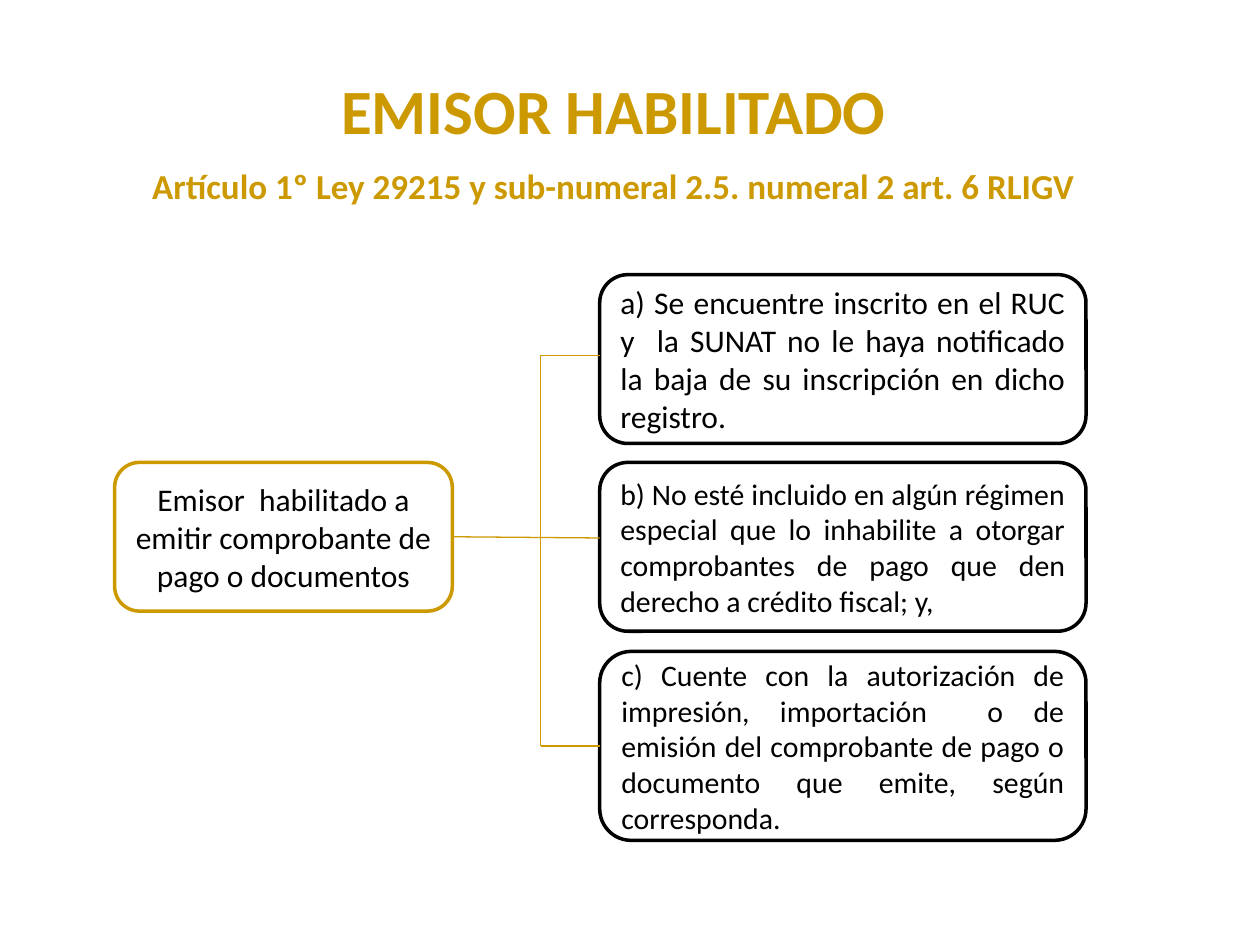
"""Build the slide on the conditions of an authorised issuer."""
from dataclasses import dataclass

from lxml import etree
from pptx import Presentation
from pptx.dml.color import RGBColor
from pptx.enum.shapes import MSO_CONNECTOR, MSO_SHAPE
from pptx.enum.text import MSO_ANCHOR, MSO_AUTO_SIZE, PP_ALIGN
from pptx.oxml.ns import qn
from pptx.slide import Slide
from pptx.util import Inches, Pt

STRAIGHT = MSO_CONNECTOR.STRAIGHT
ROUNDED = MSO_SHAPE.ROUNDED_RECTANGLE
TOP, MIDDLE = MSO_ANCHOR.TOP, MSO_ANCHOR.MIDDLE
NO_AUTOFIT = MSO_AUTO_SIZE.NONE
CENTER, JUSTIFY = PP_ALIGN.CENTER, PP_ALIGN.JUSTIFY
FONT = "Calibri"
GOLD, BLACK, WHITE = "CC9900", "000000", "FFFFFF"


@dataclass
class Box:
    """A rounded text box, in inches and points."""
    text: str
    left: float
    top: float
    width: float
    height: float
    size: int
    border: str = BLACK
    align: PP_ALIGN = JUSTIFY

    @property
    def middle(self) -> float:
        """Return the vertical centre."""
        return self.top + self.height / 2


ISSUER = Box("Emisor  habilitado a emitir comprobante de pago o documentos",
             0.91, 3.67, 2.68, 1.18, 18, GOLD, CENTER)
CONDITION_LEFT, CONDITION_WIDTH = 4.76, 3.86
CONDITIONS = [
    Box(text, CONDITION_LEFT, top, CONDITION_WIDTH, height, size)
    for text, top, height, size in (
        ("a) Se encuentre inscrito en el RUC y  la SUNAT no le haya notificado "
         "la baja de su inscripción en dicho registro.", 2.18, 1.34, 18),
        ("b) No esté incluido en algún régimen especial que lo inhabilite a otorgar "
         "comprobantes de pago que den derecho a crédito fiscal; y,", 3.67, 1.34, 17),
        ("c) Cuente con la autorización de impresión, importación  o de emisión del "
         "comprobante de pago o documento que emite, según corresponda.", 5.17, 1.5, 17),
    )
]
TRUNK = 4.29


def color(value: str) -> RGBColor:
    """Turn a hex string into a colour."""
    return RGBColor.from_string(value)


def format_paragraph(para, size: int, ink: str, align: PP_ALIGN, bold: bool = False) -> None:
    """Align a paragraph and format its runs."""
    para.alignment = align
    for span in para.runs:
        span.font.name = FONT
        span.font.size = Pt(size)
        span.font.bold = bold
        span.font.color.rgb = color(ink)


def add_title(page: Slide) -> None:
    """Fill the title placeholder with the heading and its legal basis."""
    title = page.shapes.title
    title.left, title.top = Inches(0.59), Inches(0.52)
    title.width, title.height = Inches(8.56), Inches(1.21)
    frame = title.text_frame
    frame.text = ("EMISOR HABILITADO\n"
                  "Artículo 1º Ley 29215 y sub-numeral 2.5. numeral 2 art. 6 RLIGV")
    frame.auto_size = NO_AUTOFIT
    frame.vertical_anchor = TOP
    heading, basis = frame.paragraphs
    format_paragraph(heading, 36, GOLD, CENTER, bold=True)
    format_paragraph(basis, 20, GOLD, CENTER, bold=True)
    basis.space_before = Pt(10)


def add_box(page: Slide, box: Box) -> None:
    """Draw a rounded box with its text."""
    shape = page.shapes.add_shape(ROUNDED, Inches(box.left), Inches(box.top),
                                  Inches(box.width), Inches(box.height))
    shape.shadow.inherit = False
    shape.fill.solid()
    shape.fill.fore_color.rgb = color(WHITE)
    shape.line.color.rgb = color(box.border)
    shape.line.width = Pt(2)
    frame = shape.text_frame
    frame.word_wrap = True
    frame.vertical_anchor = MIDDLE
    frame.text = box.text
    format_paragraph(frame.paragraphs[0], box.size, BLACK, box.align)


def add_line(page: Slide, left: float, top: float, right: float, bottom: float) -> None:
    """Draw a thin gold line between two points."""
    line = page.shapes.add_connector(STRAIGHT, Inches(left), Inches(top),
                                     Inches(right), Inches(bottom))
    line.line.color.rgb = color(GOLD)
    line.line.width = Pt(0.75)
    etree.SubElement(line._element.spPr, qn("a:effectLst"))


def main() -> None:
    """Build and save the deck."""
    deck = Presentation()
    deck.slide_width, deck.slide_height = Inches(10), Inches(7.5)
    page = deck.slides.add_slide(deck.slide_layouts[5])
    add_title(page)
    for box in (ISSUER, *CONDITIONS):
        add_box(page, box)
    first, last = CONDITIONS[0].middle - 0.03, CONDITIONS[-1].middle
    add_line(page, ISSUER.left + ISSUER.width, ISSUER.middle, CONDITION_LEFT, 4.27)
    add_line(page, TRUNK, first, TRUNK, last)
    for height in (first, last):
        add_line(page, TRUNK, height, CONDITION_LEFT, height)
    deck.save("out.pptx")


if __name__ == "__main__":
    main()
